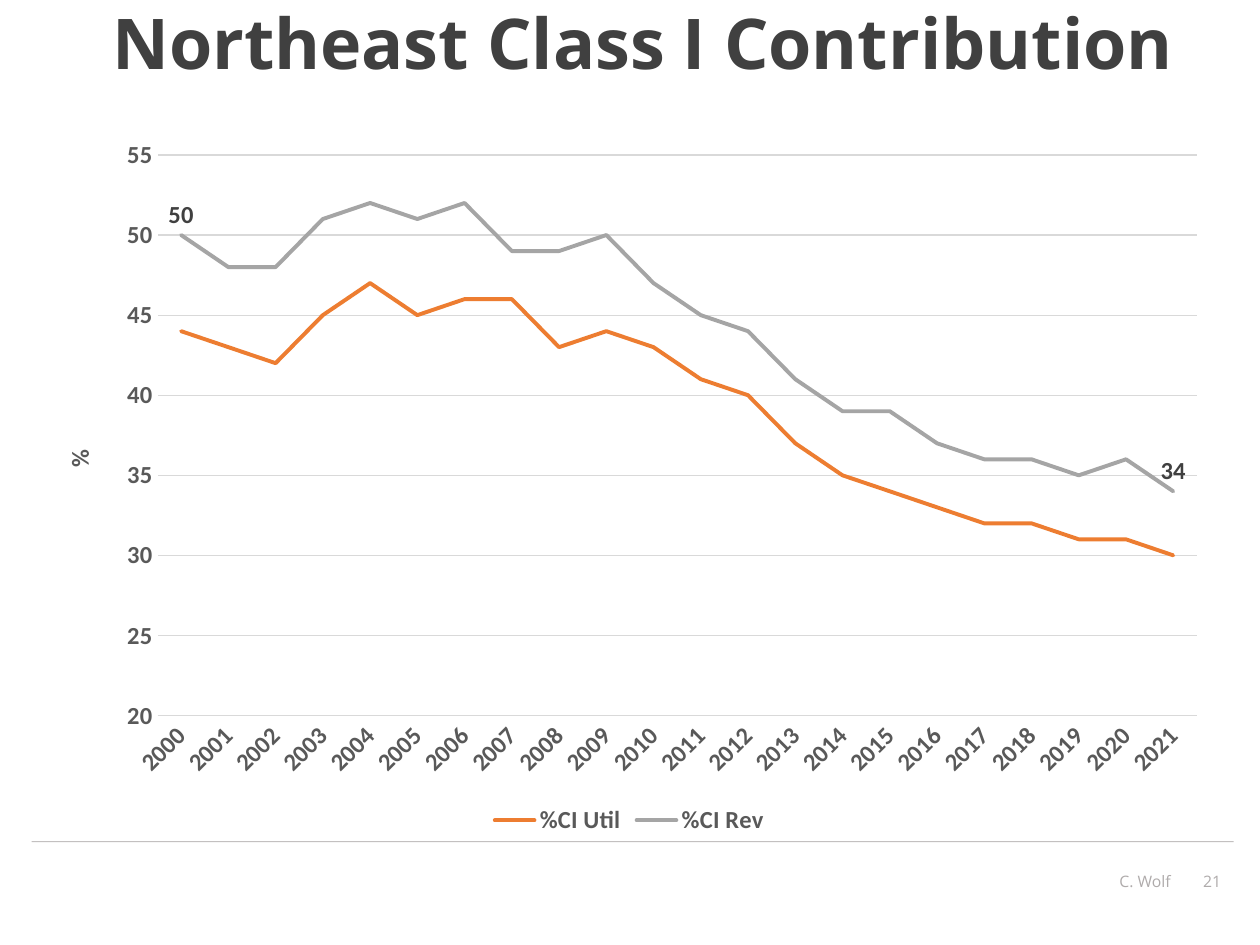
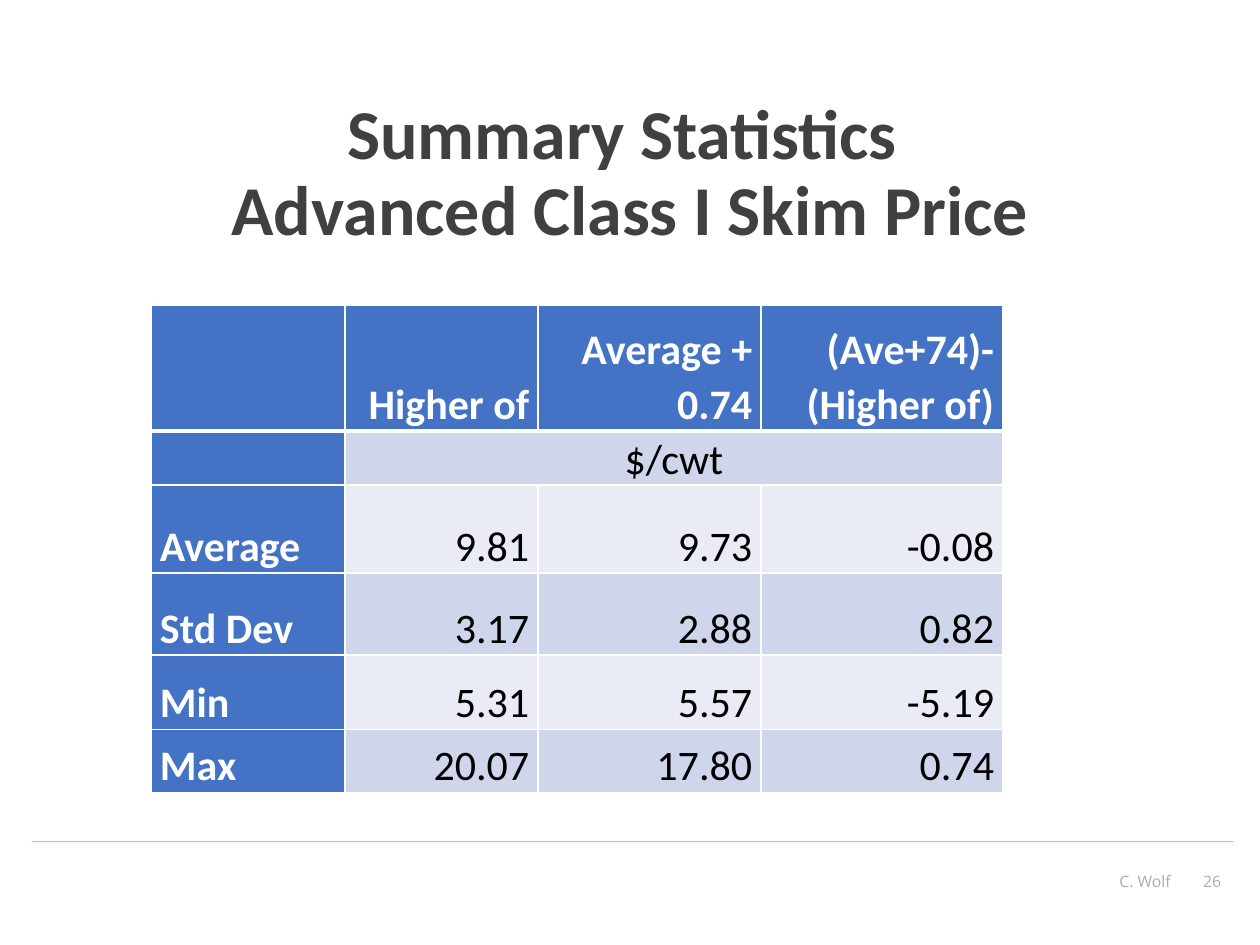
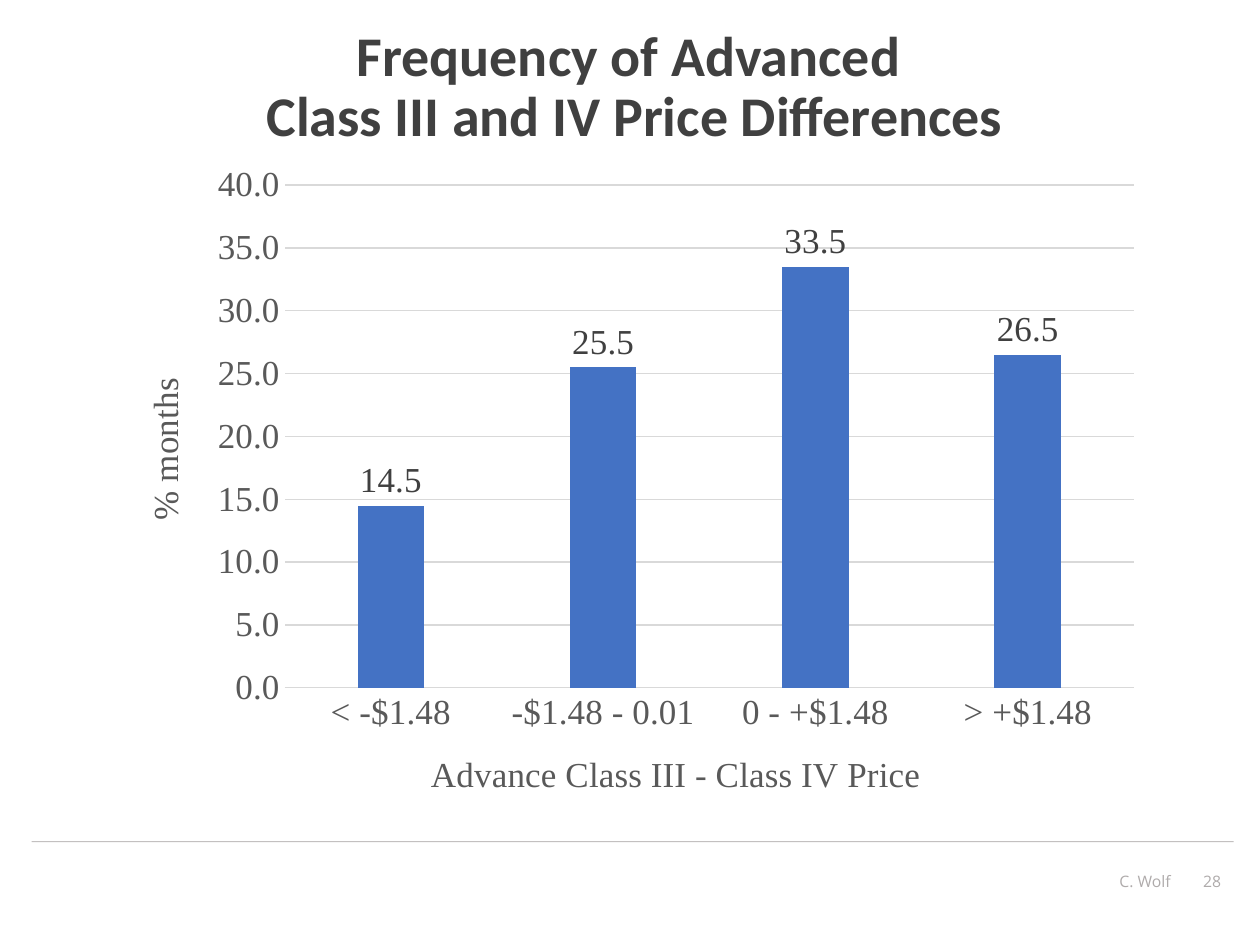
import dataclasses

import pptx
import pptx.chart.data
import pptx.dml.color
import pptx.enum.chart
import pptx.enum.shapes
import pptx.enum.text
import pptx.oxml
import pptx.oxml.ns
import pptx.util

Inches = pptx.util.Inches
Align = pptx.enum.text.PP_ALIGN
Anchor = pptx.enum.text.MSO_ANCHOR
qn = pptx.oxml.ns.qn


@dataclasses.dataclass(frozen=True)
class Theme:
    title: str = "404040"
    footer: str = "AFABAB"
    axis: str = "595959"
    grid: str = "D9D9D9"
    orange: str = "ED7D31"
    gray: str = "A5A5A5"
    blue: str = "4472C4"
    dark_band: str = "CFD5EA"
    light_band: str = "E9EBF5"
    white: str = "FFFFFF"
    black: str = "000000"
    sans: str = "Open Sans"
    body: str = "Calibri"
    serif: str = "Times New Roman"
    big_title: int = 40
    small_title: int = 32
    footer_size: int = 9
    table_size: int = 24
    line_chart_size: int = 14
    column_chart_size: int = 20


THEME = Theme()

YEARS = [str(year) for year in range(2000, 2022)]
UTILIZATION = [44, 43, 42, 45, 47, 45, 46, 46, 43, 44, 43,
               41, 40, 37, 35, 34, 33, 32, 32, 31, 31, 30]
REVENUE = [50, 48, 48, 51, 52, 51, 52, 49, 49, 50, 47,
           45, 44, 41, 39, 39, 37, 36, 36, 35, 36, 34]
STATISTICS = [
    ["", "Higher of", "Average + 0.74", "(Ave+74)-(Higher of)"],
    ["", "$/cwt", "", ""],
    ["Average", "9.81", "9.73", "-0.08"],
    ["Std Dev", "3.17", "2.88", "0.82"],
    ["Min", "5.31", "5.57", "-5.19"],
    ["Max", "20.07", "17.80", "0.74"],
]
COLUMN_WIDTHS = [1.54, 1.53, 1.77, 1.92]
ROW_HEIGHTS = [1, 0.42, 0.7, 0.65, 0.59, 0.5]


def color(value):
    return pptx.dml.color.RGBColor.from_string(value)


def set_font(font, name, size, value, bold=False):
    font.name, font.size, font.bold = name, pptx.util.Pt(size), bold
    font.color.rgb = color(value)


def set_line(line, value, width):
    line.color.rgb = color(value)
    line.width = pptx.util.Pt(width)


# Shared text, title and footer
def add_text(page, box, text, name, size, value, align, bold=False, spacing=1.0):
    frame = page.shapes.add_textbox(*map(Inches, box)).text_frame
    frame.word_wrap = True
    para = frame.paragraphs[0]
    para.text = text
    para.alignment = align
    para.line_spacing = spacing
    set_font(para.font, name, size, value, bold)


def add_title(page, left, top, text, name, size):
    add_text(page, (left, top, 8.98, 1.25), text, name, size, THEME.title,
             Align.CENTER, bold=True, spacing=0.9)


def add_footer(page, number):
    rule = page.shapes.add_connector(
        pptx.enum.shapes.MSO_CONNECTOR.STRAIGHT,
        Inches(0.25), Inches(6.68), Inches(9.79), Inches(6.68))
    set_line(rule.line, THEME.footer, 0.5)
    properties = rule._element.spPr
    tint = properties.find(".//" + qn("a:srgbClr"))
    tint.append(tint.makeelement(qn("a:alpha"), {"val": "75000"}))
    properties.append(properties.makeelement(qn("a:effectLst"), {}))
    for left, width, text in ((4.35, 5.04, "C. Wolf"), (9.39, 0.4, str(number))):
        add_text(page, (left, 6.87, width, 0.4), text, THEME.sans,
                 THEME.footer_size, THEME.footer, Align.RIGHT)


def new_page(deck, number):
    page = deck.slides.add_slide(deck.slide_layouts[6])
    add_footer(page, number)
    return page


# Chart parts
def place(parent, index, box, part):
    """Fix a chart part, given in inches from the corner of the chart box."""
    for old in parent.findall(qn("c:layout")):
        parent.remove(old)
    layout = parent.makeelement(qn("c:layout"), {})
    manual = layout.makeelement(qn("c:manualLayout"), {})
    layout.append(manual)
    settings = {"layoutTarget": "inner"} if len(part) == 4 else {}
    settings.update(xMode="edge", yMode="edge")
    width, height = box[2:]
    for tag, length, whole in zip("xywh", part, (width, height) * 2):
        settings[tag] = length / whole
    for tag, value in settings.items():
        manual.append(manual.makeelement(qn("c:" + tag), {"val": str(value)}))
    parent.insert(index, layout)


def add_chart(page, kind, box, data, name, size, bold, plot_box):
    chart = page.shapes.add_chart(kind, *map(Inches, box), data).chart
    chart.has_title = False
    chart.has_legend = False
    set_font(chart.font, name, size, THEME.axis, bold)
    place(chart._chartSpace.find(".//" + qn("c:plotArea")), 0, box, plot_box)
    for axis in (chart.category_axis, chart.value_axis):
        axis.major_tick_mark = pptx.enum.chart.XL_TICK_MARK.NONE
        axis.minor_tick_mark = pptx.enum.chart.XL_TICK_MARK.NONE
        set_font(axis.tick_labels.font, name, size, THEME.axis, bold)
    set_line(chart.category_axis.format.line, THEME.grid, 0.75)
    chart.value_axis.format.line.fill.background()
    chart.value_axis.has_major_gridlines = True
    set_line(chart.value_axis.major_gridlines.format.line, THEME.grid, 0.75)
    return chart


def scale_axis(axis, low, high, number_format):
    axis.minimum_scale, axis.maximum_scale, axis.major_unit = low, high, 5
    axis.tick_labels.number_format = number_format
    axis.tick_labels.number_format_is_linked = False


def title_axis(axis, text, name, size, bold, box, corner):
    para = axis.axis_title.text_frame.paragraphs[0]
    para.text = text
    set_font(para.font, name, size, THEME.axis, bold)
    place(axis.axis_title._element, 1, box, corner)


def contribution_chart(page, box):
    name, size = THEME.body, THEME.line_chart_size
    data = pptx.chart.data.CategoryChartData(number_format="0")
    data.categories = YEARS
    data.add_series("%CI Util", UTILIZATION)
    data.add_series("%CI Rev", REVENUE)
    chart = add_chart(page, pptx.enum.chart.XL_CHART_TYPE.LINE, box, data,
                      name, size, True, (0.96, 0.24, 8.25, 4.45))
    scale_axis(chart.value_axis, 20, 55, "0")
    title_axis(chart.value_axis, "%", name, size, True, box, (0.17, 2.54))
    # Slanted years
    body = chart.category_axis._element.find(qn("c:txPr")).find(qn("a:bodyPr"))
    body.set("rot", "-2700000")
    chart.has_legend = True
    chart.legend.position = pptx.enum.chart.XL_LEGEND_POSITION.BOTTOM
    chart.legend.include_in_layout = False
    set_font(chart.legend.font, name, size, THEME.axis, True)
    for series, value in zip(chart.plots[0].series, (THEME.orange, THEME.gray)):
        series.smooth = False
        series.marker.style = pptx.enum.chart.XL_MARKER_STYLE.NONE
        set_line(series.format.line, value, 2.25)
        series._element.find(".//" + qn("a:ln")).set("cap", "rnd")
    # Labels on the first and last year of revenue
    revenue = chart.plots[0].series[1]
    revenue.data_labels.show_value = False
    for index in (0, len(YEARS) - 1):
        label = revenue.points[index].data_label
        set_font(label.font, name, size, THEME.title, True)
        label.position = pptx.enum.chart.XL_LABEL_POSITION.ABOVE


def frequency_chart(page, box):
    name, size = THEME.serif, THEME.column_chart_size
    data = pptx.chart.data.CategoryChartData(number_format="0.0")
    data.categories = ["< -$1.48", "-$1.48 - 0.01", "0 - +$1.48", "> +$1.48"]
    data.add_series("Series 1", [14.5, 25.5, 33.5, 26.5])
    chart = add_chart(page, pptx.enum.chart.XL_CHART_TYPE.COLUMN_CLUSTERED, box,
                      data, name, size, False, (1.35, 0.26, 6.74, 3.99))
    scale_axis(chart.value_axis, 0, 40, "0.0")
    title_axis(chart.value_axis, "% months", name, size, False, box, (0.17, 1.74))
    title_axis(chart.category_axis, "Advance Class III - Class IV Price",
               name, size, False, box, (2.46, 4.71))
    plot = chart.plots[0]
    plot.gap_width, plot.overlap, plot.vary_by_categories = 219, -27, False
    fill = plot.series[0].format.fill
    fill.solid()
    fill.fore_color.rgb = color(THEME.blue)
    labels = plot.series[0].data_labels
    labels.show_value = True
    labels.number_format, labels.number_format_is_linked = "0.0", False
    labels.position = pptx.enum.chart.XL_LABEL_POSITION.OUTSIDE_END
    set_font(labels.font, name, size, THEME.title)


# Table parts
def border_cell(cell, **widths):
    properties = cell._tc.get_or_add_tcPr()
    for side in "LRTB":
        width = pptx.util.Pt(widths.get(side, 1))
        properties.append(pptx.oxml.parse_xml(
            f'<a:ln{side} xmlns:a="http://schemas.openxmlformats.org/drawingml/2006/main"'
            f' w="{width}"><a:solidFill><a:srgbClr val="{THEME.white}"/>'
            f'</a:solidFill></a:ln{side}>'))


def style_cell(cell, row, column, text):
    heading = row == 0 or column == 0
    border_cell(cell, **{0: {"B": 3}, 1: {"T": 3}}.get(row, {}))
    band = THEME.dark_band if row % 2 else THEME.light_band
    cell.fill.solid()
    cell.fill.fore_color.rgb = color(THEME.blue if heading else band)
    cell.vertical_anchor = Anchor.BOTTOM
    cell.margin_left = cell.margin_right = Inches(0.07)
    cell.margin_top = cell.margin_bottom = 0
    if text:
        para = cell.text_frame.paragraphs[0]
        para.text = text
        para.line_spacing = 1.07
        para.alignment = (Align.LEFT if column == 0 else
                          Align.CENTER if row == 1 else Align.RIGHT)
        set_font(para.font, THEME.body, THEME.table_size,
                 THEME.white if heading else THEME.black, heading)


def statistics_table(page, left, top):
    table = page.shapes.add_table(
        len(ROW_HEIGHTS), len(COLUMN_WIDTHS), Inches(left), Inches(top),
        Inches(sum(COLUMN_WIDTHS)), Inches(sum(ROW_HEIGHTS))).table
    table.first_row = table.horz_banding = False
    for column, width in zip(table.columns, COLUMN_WIDTHS):
        column.width = Inches(width)
    for row, height in zip(table.rows, ROW_HEIGHTS):
        row.height = Inches(height)
    for row, texts in enumerate(STATISTICS):
        for column, text in enumerate(texts):
            style_cell(table.cell(row, column), row, column, text)
    # Unit row spans the value columns
    table.cell(1, 1).merge(table.cell(1, 3))


# Slides
def contribution_slide(deck):
    page = new_page(deck, 21)
    add_title(page, 0.61, 0.02, "Northeast Class I Contribution",
              THEME.sans, THEME.big_title)
    contribution_chart(page, (0.29, 0.99, 9.41, 5.68))


def statistics_slide(deck):
    page = new_page(deck, 26)
    add_title(page, 0.51, 0.74, "Summary Statistics \vAdvanced Class I Skim Price",
              THEME.body, THEME.big_title)
    statistics_table(page, 1.2, 2.42)


def frequency_slide(deck):
    page = new_page(deck, 28)
    add_title(page, 0.55, 0.17,
              "Frequency of Advanced \vClass III and IV Price Differences",
              THEME.body, THEME.small_title)
    frequency_chart(page, (0.91, 1.21, 8.25, 5.36))


def main():
    deck = pptx.Presentation()
    deck.slide_width, deck.slide_height = Inches(10), Inches(7.5)
    contribution_slide(deck)
    statistics_slide(deck)
    frequency_slide(deck)
    deck.save("out.pptx")


if __name__ == "__main__":
    main()
